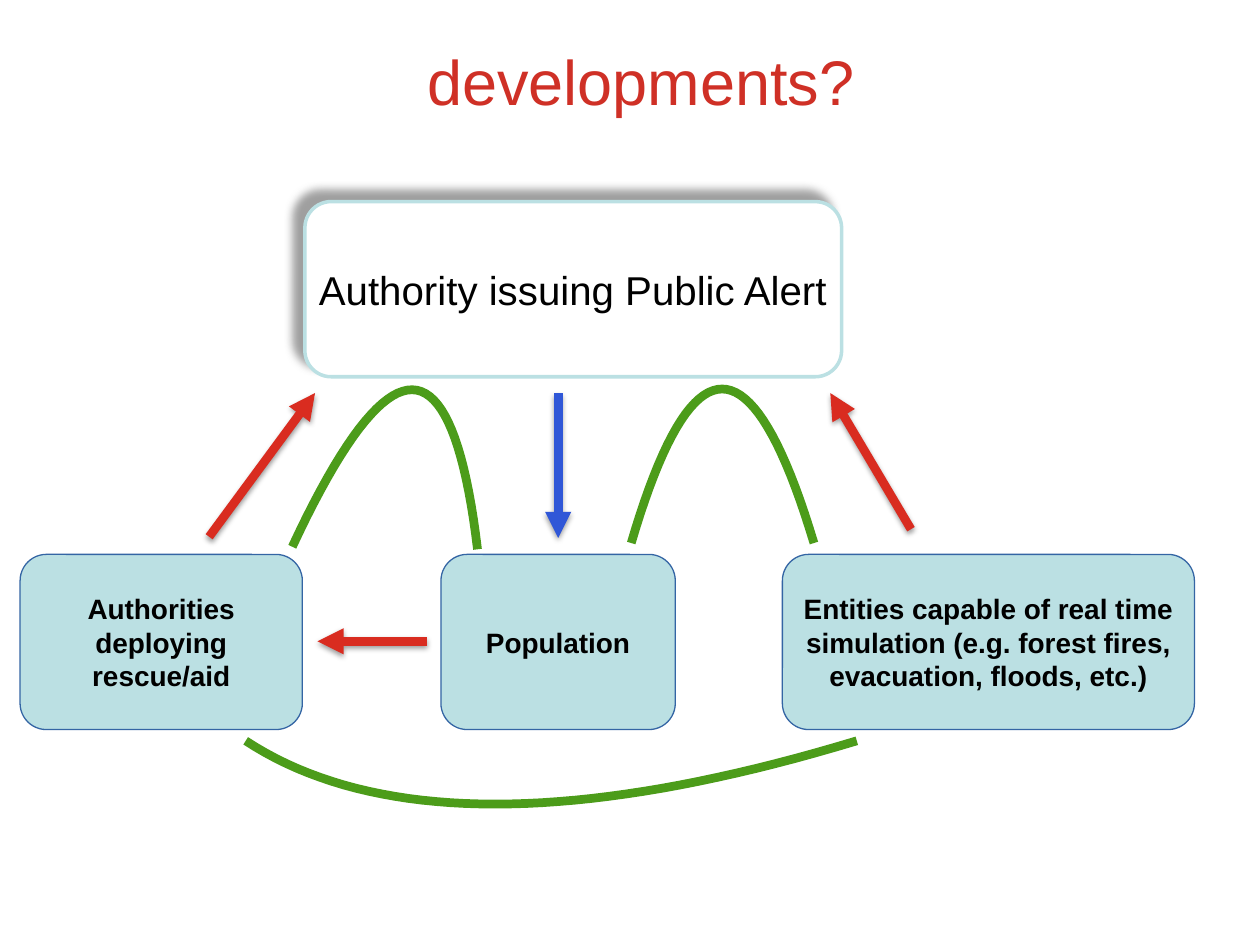
"""Build a slide on how public alerts link authorities, people and simulators."""
from lxml import etree
from pptx import Presentation
from pptx.dml.color import RGBColor
from pptx.enum.shapes import MSO_CONNECTOR, MSO_SHAPE
from pptx.enum.text import MSO_ANCHOR, MSO_AUTO_SIZE, PP_ALIGN
from pptx.oxml.ns import qn
from pptx.util import Inches, Pt

ROUND, LINE = MSO_SHAPE.ROUNDED_RECTANGLE, MSO_CONNECTOR.STRAIGHT
LEFT, CENTER, MIDDLE = PP_ALIGN.LEFT, PP_ALIGN.CENTER, MSO_ANCHOR.MIDDLE

THEME = {
    "font": "Arial", "title": 36, "head": 23, "body": 16, "stroke": 5,
    "ink": "000000", "rust": "CF3026", "white": "FFFFFF", "pale": "BBE0E3",
    "edge": "3465A4", "red": "D92C20", "blue": "3057D7", "green": "4C9C1A",
}
GLOW = ("808080", 75, 5, 8.5, 225)
DROP = ("000000", 38, 3, 1.6, 90)

WIDE, HIGH = 10, 7.5
TALL = 1.39
ROWS = {"top": 1.6, "low": 4.4}
TIP = 3.12
MID = 5.09
STEPS = 40

TITLE = ("developments?", (3.39, 0.3, 3.51, 0.67))
HEAD = {"fill": "white", "line": "pale", "width": 2, "size": "head", "bold": False}
BODY = {"fill": "pale", "line": "edge", "width": 0, "size": "body", "bold": True}
BOXES = [
    ("Authority issuing Public Alert", 2.42, "top", 4.26, HEAD, GLOW),
    ("Authorities deploying rescue/aid", 0.16, "low", 2.24, BODY, None),
    ("Population", 3.5, "low", 1.86, BODY, None),
    ("Entities capable of real time simulation (e.g. forest fires, evacuation, floods, etc.)",
     6.21, "low", 3.27, BODY, None),
]
ARROWS = [
    ((1.66, 4.26), (2.5, TIP), "red"),
    ((7.23, 4.2), (6.59, TIP), "red"),
    ((4.43, TIP), (4.43, 4.27), "blue"),
    ((3.39, MID), (2.52, MID), "red"),
]
CURVES = [
    ((2.32, 4.34), (3.1, 2.67), (3.59, 2.68), (3.79, 4.36)),
    ((5.01, 4.31), (5.49, 2.68), (5.97, 2.68), (6.46, 4.31)),
    ((1.95, 5.88), (2.97, 6.55), (4.59, 6.55), (6.8, 5.88)),
]


def tint(name):
    return RGBColor.from_string(THEME[name])


def apply(item, values):
    for key, value in values.items():
        setattr(item, key, value)


def write(shape, text, size, color, bold, align, wrap):
    frame = shape.text_frame
    apply(frame, {"text": text, "word_wrap": wrap, "vertical_anchor": MIDDLE,
                  "auto_size": MSO_AUTO_SIZE.NONE, "margin_left": 0,
                  "margin_right": 0, "margin_top": 0, "margin_bottom": 0})
    para = frame.paragraphs[0]
    para.alignment = align
    font = para.runs[0].font
    apply(font, {"name": THEME["font"], "size": Pt(THEME[size]), "bold": bold})
    font.color.rgb = tint(color)


def shade(shape, color, alpha, blur, dist, angle):
    group = etree.SubElement(shape._element.spPr, qn("a:effectLst"))
    outer = etree.SubElement(group, qn("a:outerShdw"), blurRad=str(Pt(blur)),
                             dist=str(Pt(dist)), dir=str(angle * 60000),
                             algn="ctr", rotWithShape="0")
    paint = etree.SubElement(outer, qn("a:srgbClr"), val=color)
    etree.SubElement(paint, qn("a:alpha"), val=str(alpha * 1000))


def stroke(shape, color, width):
    shape.line.color.rgb = tint(color)
    shape.line.width = Pt(width)


def add_box(shapes, text, left, row, wide, look, glow):
    box = shapes.add_shape(ROUND, *map(Inches, (left, ROWS[row], wide, TALL)))
    box.adjustments[0] = 0.15
    box.fill.solid()
    box.fill.fore_color.rgb = tint(look["fill"])
    stroke(box, look["line"], look["width"])
    if glow:
        shade(box, *glow)
    else:
        box.shadow.inherit = False
    write(box, text, look["size"], "ink", look["bold"], CENTER, True)


def add_arrow(shapes, start, end, color):
    arrow = shapes.add_connector(LINE, *map(Inches, start + end))
    stroke(arrow, color, THEME["stroke"])
    etree.SubElement(arrow.line._get_or_add_ln(), qn("a:tailEnd"), type="triangle")
    shade(arrow, *DROP)


def bend(knots, t):
    parts = ((1 - t) ** 3, 3 * t * (1 - t) ** 2, 3 * t * t * (1 - t), t ** 3)
    return tuple(Inches(sum(p * k[axis] for p, k in zip(parts, knots))) for axis in (0, 1))


def add_curve(shapes, knots):
    first, *rest = [bend(knots, i / STEPS) for i in range(STEPS + 1)]
    pen = shapes.build_freeform(*first)
    pen.add_line_segments(rest, close=False)
    curve = pen.convert_to_shape()
    curve.fill.background()
    curve.shadow.inherit = False
    stroke(curve, "green", THEME["stroke"])


def main():
    deck = Presentation()
    apply(deck, {"slide_width": Inches(WIDE), "slide_height": Inches(HIGH)})
    shapes = deck.slides.add_slide(deck.slide_layouts[5]).shapes
    text, place = TITLE
    apply(shapes.title, dict(zip(("left", "top", "width", "height"), map(Inches, place))))
    write(shapes.title, text, "title", "rust", False, LEFT, False)
    for box in BOXES:
        add_box(shapes, *box)
    for arrow in ARROWS:
        add_arrow(shapes, *arrow)
    for knots in CURVES:
        add_curve(shapes, knots)
    deck.save("out.pptx")


if __name__ == "__main__":
    main()
